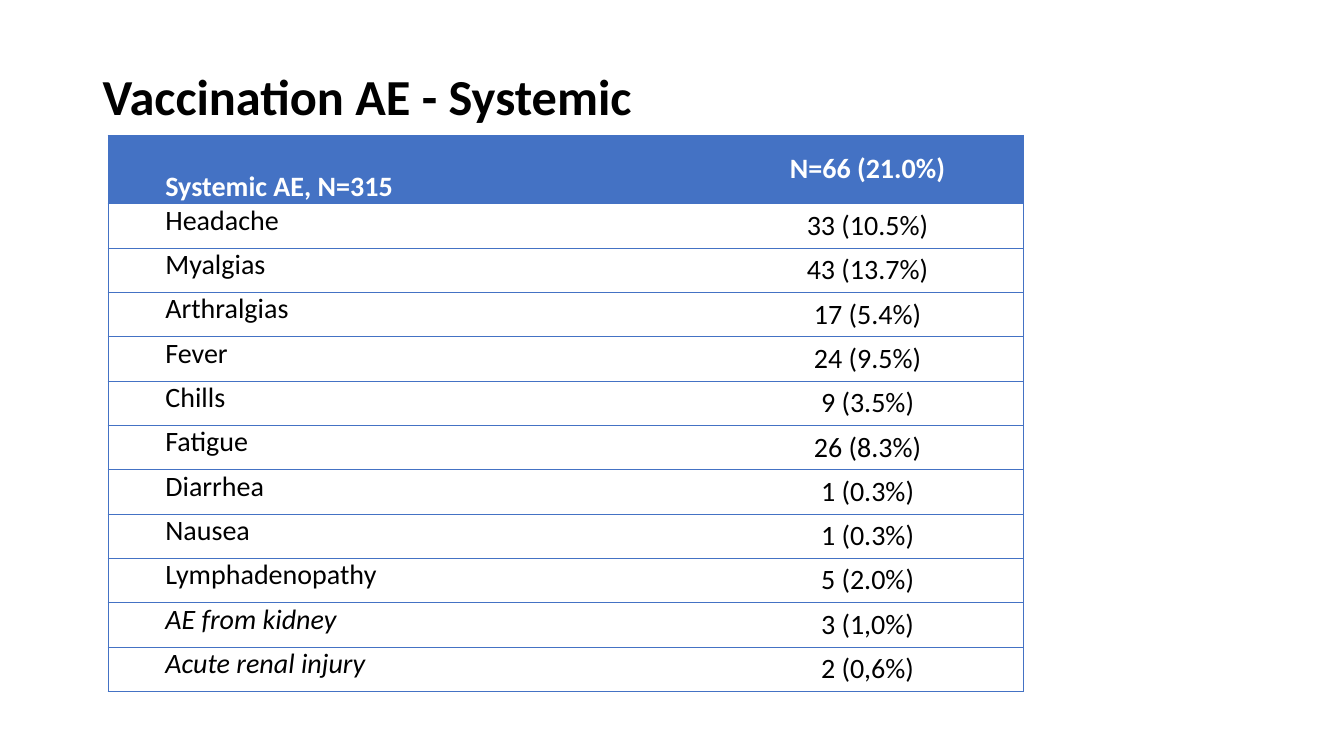
from typing import NamedTuple

from lxml.etree import SubElement
from pptx import Presentation
from pptx.dml.color import RGBColor
from pptx.enum.text import MSO_ANCHOR as Anchor, PP_ALIGN as Align
from pptx.oxml.ns import qn
from pptx.slide import Slide
from pptx.table import _Cell as Cell
from pptx.text.text import _Paragraph as Paragraph
from pptx.util import Inches, Pt

BLUE, WHITE, BLACK = "4472C4", "FFFFFF", "000000"
COLUMN_WIDTHS = (5.49, 3.59)
HEADER_HEIGHT, ROW_HEIGHT = 0.68, 0.44
CELL_MARGINS = {
    "margin_left": Inches(0.07),
    "margin_right": Inches(0.07),
    "margin_top": 0,
    "margin_bottom": 0,
}


class Event(NamedTuple):
    name: str
    count: str
    italic: bool = False


HEADER = Event("Systemic ΑΕ, Ν=315", "Ν=66 (21.0%)")
EVENTS = [
    Event("Headache", "33 (10.5%)"),
    Event("Myalgias", "43 (13.7%)"),
    Event("Arthralgias", "17 (5.4%)"),
    Event("Fever", "24 (9.5%)"),
    Event("Chills", "9 (3.5%)"),
    Event("Fatigue", "26 (8.3%)"),
    Event("Diarrhea", "1 (0.3%)"),
    Event("Nausea", "1 (0.3%)"),
    Event("Lymphadenopathy", "5 (2.0%)"),
    Event("ΑΕ from kidney", "3 (1,0%)", italic=True),
    Event("Acute renal injury", "2 (0,6%)", italic=True),
]


def rgb(value: str) -> RGBColor:
    return RGBColor.from_string(value)


def write(paragraph: Paragraph, text: str, color: str, **formats: object) -> None:
    run = paragraph.add_run()
    run.text = text
    run.font.color.rgb = rgb(color)
    for attribute, value in ({"name": "Calibri"} | formats).items():
        setattr(run.font, attribute, value)


def set_borders(cell: Cell, open_side: str) -> None:
    """Draw thin blue borders on every side but the open one."""
    properties = cell._tc.get_or_add_tcPr()
    for position, side in enumerate("LRTB"):
        line = SubElement(properties, qn(f"a:ln{side}"), w=str(Pt(0.5)))
        if side == open_side:
            SubElement(line, qn("a:noFill"))
        else:
            fill = SubElement(line, qn("a:solidFill"))
            SubElement(fill, qn("a:srgbClr"), val=BLUE)
        properties.insert(position, line)


def fill_cell(cell: Cell, event: Event, column: int) -> None:
    is_header, is_name = event is HEADER, column == 0
    name_anchor = Anchor.BOTTOM if is_header else Anchor.TOP
    for attribute, value in CELL_MARGINS.items():
        setattr(cell, attribute, value)
    cell.vertical_anchor = name_anchor if is_name else Anchor.MIDDLE
    cell.fill.solid()
    cell.fill.fore_color.rgb = rgb(BLUE if is_header else WHITE)
    paragraph = cell.text_frame.paragraphs[0]
    paragraph.alignment = Align.LEFT if is_name else Align.CENTER
    indent = paragraph._p.get_or_add_pPr()
    indent.set("marL", str(Inches(0.5)))
    indent.set("indent", "0")
    write(paragraph, event[column], WHITE if is_header else BLACK,
          size=Pt(20), bold=is_header, italic=event.italic and is_name)
    set_borders(cell, open_side="R" if is_name else "L")


def add_title(slide: Slide, text: str) -> None:
    title = slide.shapes.add_textbox(
        Inches(0.92), Inches(0.4), Inches(11.5), Inches(1.16)).text_frame
    title.word_wrap = True
    title.vertical_anchor = Anchor.MIDDLE
    title.paragraphs[0].line_spacing = 0.9
    write(title.paragraphs[0], text, BLACK, size=Pt(36), bold=True)


def add_event_table(slide: Slide, events: list[Event]) -> None:
    height = HEADER_HEIGHT + ROW_HEIGHT * len(events)
    table = slide.shapes.add_table(
        len(events) + 1, len(COLUMN_WIDTHS), Inches(1.07), Inches(1.34),
        Inches(sum(COLUMN_WIDTHS)), Inches(height)).table
    table.horz_banding = False
    for column, width in zip(table.columns, COLUMN_WIDTHS):
        column.width = Inches(width)
    for row, event in zip(table.rows, [HEADER, *events]):
        row.height = Inches(HEADER_HEIGHT if event is HEADER else ROW_HEIGHT)
        for column, cell in enumerate(row.cells):
            fill_cell(cell, event, column)


def main() -> None:
    deck = Presentation()
    deck.slide_width, deck.slide_height = Inches(13.33), Inches(7.5)
    slide = deck.slides.add_slide(deck.slide_layouts[6])
    add_title(slide, "Vaccination ΑΕ - Systemic")
    add_event_table(slide, EVENTS)
    deck.save("out.pptx")


if __name__ == "__main__":
    main()
